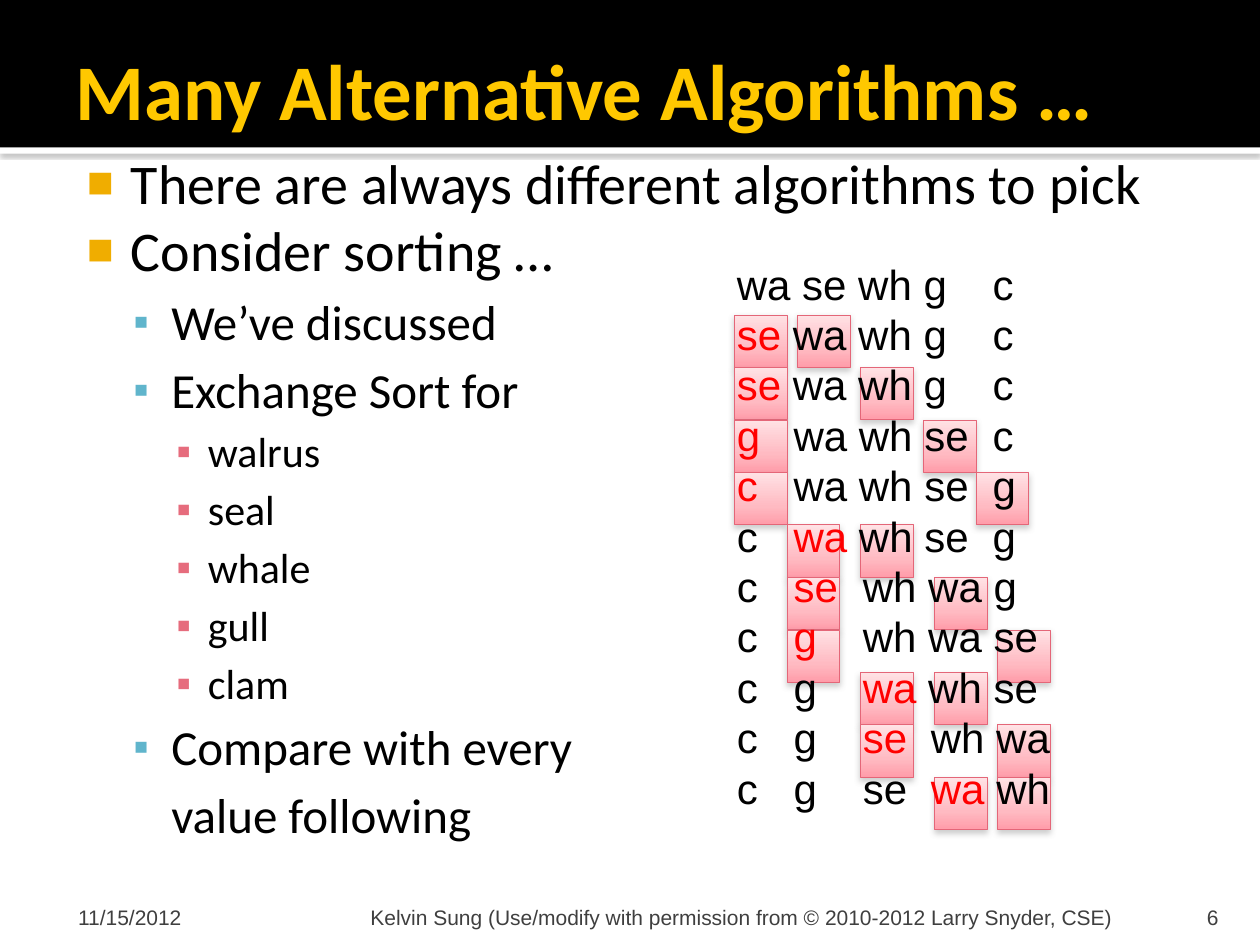
from dataclasses import dataclass

from pptx import Presentation
from pptx.dml.color import RGBColor
from pptx.enum.shapes import MSO_SHAPE
from pptx.enum.text import MSO_ANCHOR, MSO_AUTO_SIZE, PP_ALIGN
from pptx.oxml import parse_xml
from pptx.oxml.ns import qn
from pptx.util import Inches, Pt

NS = 'xmlns:a="http://schemas.openxmlformats.org/drawingml/2006/main"'
BLACK, RED, GREY = "000000", "FF0000", "3F3F3F"


@dataclass
class Level:
    size: int
    margin: float
    hanging: float
    gap: float  # space before, as a share of the text size
    bullet: str
    bullet_color: str
    bullet_percent: int


@dataclass
class Step:
    """One line of the sort: words around the red one, and the compared cells."""
    before: str
    current: str = ""
    after: str = ""
    marks: tuple[float, ...] = ()


@dataclass
class Footer:
    text: str
    left: float
    width: float
    inset_left: float
    inset_right: float
    align: PP_ALIGN = PP_ALIGN.LEFT


LEVELS = [
    Level(32, 0.48, 0.35, 0, "■", "F0AD00", 80),
    Level(28, 0.8, 0.3, 0.18, "▪", "60B5CC", 90),
    Level(24, 1.09, 0.25, 0.18, "▪", "E66C7D", 100),
]
OUTLINE = [
    (0, "There are always different algorithms to pick"),
    (0, "Consider sorting …"),
    (1, "We’ve discussed"),
    (1, "Exchange Sort for"),
    *((2, animal) for animal in ("walrus", "seal", "whale", "gull", "clam")),
    (1, "Compare with every"),
]
STEPS = [
    Step("wa se wh g\tc"),
    Step("", "se ", "wa wh g\tc", (5.83, 6.33)),
    Step("", "se ", "wa wh g\tc", (5.83, 6.83)),
    Step("", "g\t", "wa wh se\tc", (5.83, 7.33)),
    Step("", "c\t", "wa wh se\tg", (5.83, 7.75)),
    Step("c\t", "wa ", "wh se\tg", (6.25, 6.83)),
    Step("c\t", "se\t", "wh wa g", (6.25, 7.42)),
    Step("c\t", "g\t", "wh wa se", (6.25, 7.92)),
    Step("c\tg\t", "wa ", "wh se", (6.83, 7.42)),
    Step("c\tg\t", "se\t", "wh wa", (6.83, 7.92)),
    Step("c\tg\tse\t", "wa ", "wh", (7.42, 7.92)),
]
TAB_STOPS = (0.45, 1, 1.54, 2.03)
CELL = 5 / 12
FOOTERS = [
    Footer("11/15/2012", 0.5, 2.33, 0.12, 0.05),
    Footer("Kelvin Sung (Use/modify with permission from © 2010-2012 Larry Snyder, CSE)",
           2.89, 6.02, 0.05, 0.05),
    Footer("6", 8.97, 0.8, 0.1, 0.1, PP_ALIGN.RIGHT),
]


def rgb(color: str) -> RGBColor:
    return RGBColor.from_string(color)


def set_font(font, name: str, size: float, color: str) -> None:
    font.name, font.size = name, Pt(size)
    font.color.rgb = rgb(color)


def set_insets(frame, left: float, top: float, right: float, bottom: float) -> None:
    frame.margin_left, frame.margin_top = Inches(left), Inches(top)
    frame.margin_right, frame.margin_bottom = Inches(right), Inches(bottom)


def add_frame(slide, left: float, top: float, width: float, height: float):
    box = slide.shapes.add_textbox(*map(Inches, (left, top, width, height)))
    box.text_frame.word_wrap = True
    return box.text_frame


def next_paragraph(frame, index: int):
    return frame.add_paragraph() if index else frame.paragraphs[0]


def add_rectangle(slide, left: float, top: float, width: float, height: float):
    shape = slide.shapes.add_shape(
        MSO_SHAPE.RECTANGLE, *map(Inches, (left, top, width, height)))
    shape.shadow.inherit = False
    return shape


def add_shadow(shape, alpha: int, blur: float, distance: float) -> None:
    shape._element.spPr.find(qn("a:effectLst")).append(parse_xml(
        f'<a:outerShdw {NS} blurRad="{Pt(blur)}" dist="{Pt(distance)}" dir="5400000">'
        f'<a:srgbClr val="808080"><a:alpha val="{alpha * 1000}"/></a:srgbClr>'
        '</a:outerShdw>'))


def add_band(slide, top: float, height: float, color: str):
    band = add_rectangle(slide, 0, top, 10, height)
    band.fill.solid()
    band.fill.fore_color.rgb = rgb(color)
    band.line.fill.background()
    return band


def add_mark(slide, left: float, top: float) -> None:
    mark = add_rectangle(slide, left, top, CELL, CELL)
    mark.line.color.rgb, mark.line.width = rgb("E46678"), Pt(0.5)
    mark.fill.background()
    stops = "".join(
        f'<a:gs pos="{position * 1000}"><a:srgbClr val="{color}"/></a:gs>'
        for position, color in ((0, "FFE2E5"), (65, "FFBAC2"), (100, "FF9CA9")))
    properties = mark._element.spPr
    properties.replace(properties.find(qn("a:noFill")), parse_xml(
        f'<a:gradFill {NS}><a:gsLst>{stops}</a:gsLst><a:lin ang="5400000"/></a:gradFill>'))
    add_shadow(mark, 38, 3.5, 2)


def format_outline(paragraph, level: Level, bulleted: bool = True) -> None:
    set_font(paragraph.font, "Calibri", level.size, BLACK)
    paragraph.space_before = Pt(level.gap * level.size)
    properties = paragraph._p.get_or_add_pPr()
    properties.set("marL", str(Inches(level.margin)))
    properties.set("indent", str(-Inches(level.hanging) if bulleted else 0))
    bullet = (
        f'<a:buClr {NS}><a:srgbClr val="{level.bullet_color}"/></a:buClr>',
        f'<a:buSzPct {NS} val="{level.bullet_percent * 1000}"/>',
        f'<a:buFont {NS} typeface="Arial"/>',
        f'<a:buChar {NS} char="{level.bullet}"/>',
    ) if bulleted else (f'<a:buNone {NS}/>',)
    for element in bullet:
        properties.insert_element_before(parse_xml(element), "a:tabLst", "a:defRPr")


def add_outline(slide) -> None:
    frame = add_frame(slide, 0.5, 1.08, 9, 5.67)
    set_insets(frame, 0.06, 0.1, 0.1, 0.05)
    for index, (depth, text) in enumerate(OUTLINE):
        paragraph = next_paragraph(frame, index)
        paragraph.text = text
        format_outline(paragraph, LEVELS[depth])
    paragraph = frame.add_paragraph()
    paragraph.text = "value following"
    format_outline(paragraph, LEVELS[1], bulleted=False)


def add_sort_steps(slide) -> None:
    frame = add_frame(slide, 5.75, 2, 3, 4.54)
    tabs = "".join(f'<a:tab pos="{Inches(stop)}" algn="l"/>' for stop in TAB_STOPS)
    for index, step in enumerate(STEPS):
        paragraph = next_paragraph(frame, index)
        for text, color in ((step.before, BLACK), (step.current, RED), (step.after, BLACK)):
            if text:
                run = paragraph.add_run()
                run.text = text
                set_font(run.font, "Arial", 24, color)
        paragraph._p.get_or_add_pPr().append(
            parse_xml(f'<a:tabLst {NS}>{tabs}</a:tabLst>'))


def add_footer(slide, footer: Footer) -> None:
    frame = add_frame(slide, footer.left, 7.08, footer.width, 0.3)
    set_insets(frame, footer.inset_left, 0.05, footer.inset_right, 0)
    frame.vertical_anchor = MSO_ANCHOR.BOTTOM
    paragraph = frame.paragraphs[0]
    paragraph.text, paragraph.alignment = footer.text, footer.align
    set_font(paragraph.font, "Arial", 12, GREY)


def format_title(slide) -> None:
    title = slide.shapes.title
    title.left, title.top, title.width, title.height = map(Inches, (0.5, 0.17, 9, 1.08))
    frame = title.text_frame
    frame.auto_size, frame.vertical_anchor = MSO_AUTO_SIZE.NONE, MSO_ANCHOR.MIDDLE
    set_insets(frame, 0.1, 0.05, 0.05, 0.05)
    paragraph = frame.paragraphs[0]
    paragraph.text, paragraph.alignment = "Many Alternative Algorithms …", PP_ALIGN.LEFT
    set_font(paragraph.font, "Calibri", 45, "FFC800")
    paragraph.font.bold = True
    # Bring the title in front of the header band
    slide.shapes._spTree.append(title._element)


def main() -> None:
    presentation = Presentation()
    presentation.slide_width, presentation.slide_height = Inches(10), Inches(7.5)
    slide = presentation.slides.add_slide(presentation.slide_layouts[5])
    # Header
    add_shadow(add_band(slide, 1.17, 0.05, "FFFFFF"), 60, 2.5, 0.8)
    add_band(slide, 0, 1.17, BLACK)
    # Compared cells; the last three rows sit slightly higher
    for row, step in enumerate(STEPS[1:]):
        top = 2.5 + row * CELL - (0.08 if row > 6 else 0)
        for left in step.marks:
            add_mark(slide, left, top)
    # Texts
    add_outline(slide)
    add_sort_steps(slide)
    format_title(slide)
    for footer in FOOTERS:
        add_footer(slide, footer)
    presentation.save("out.pptx")


if __name__ == "__main__":
    main()
